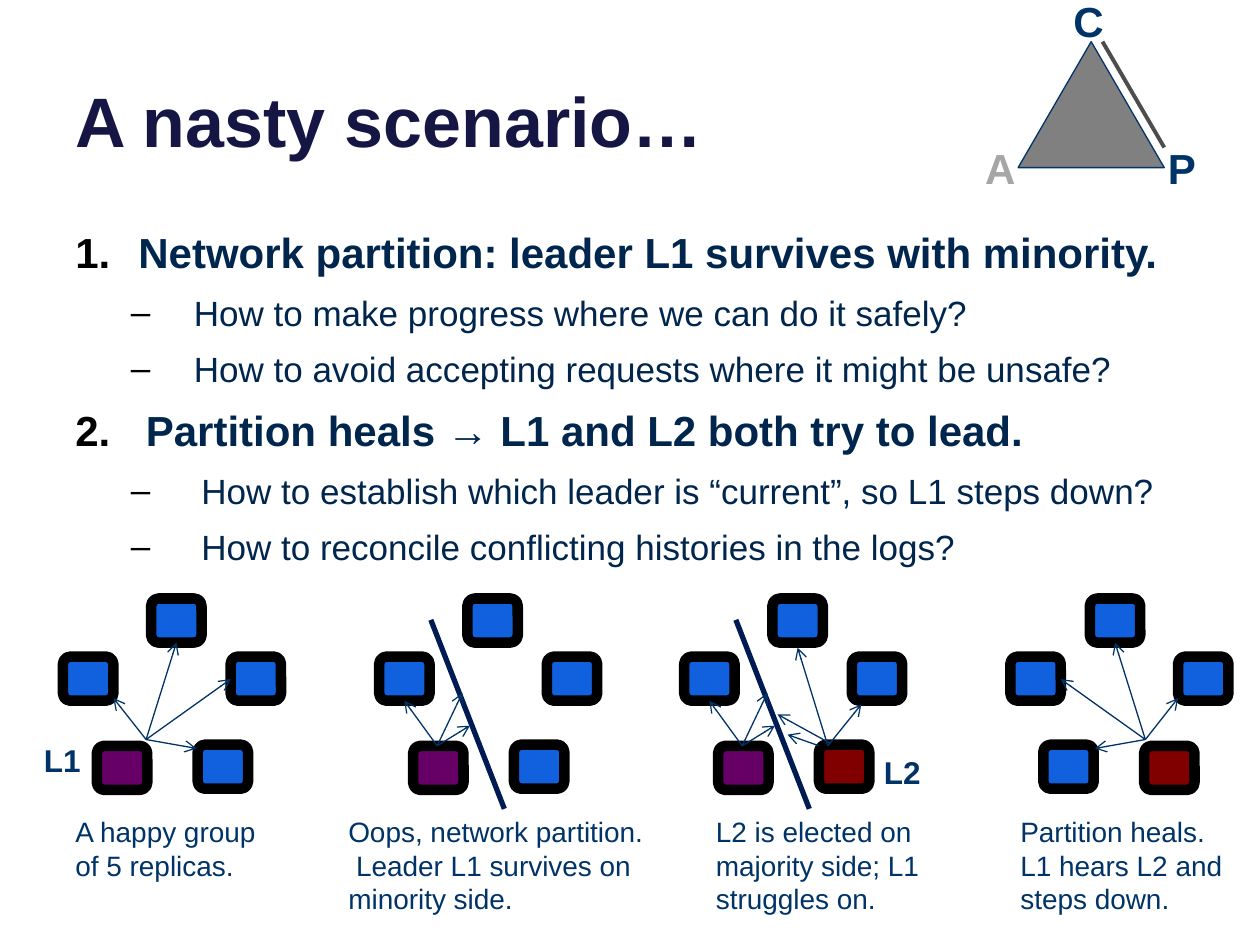
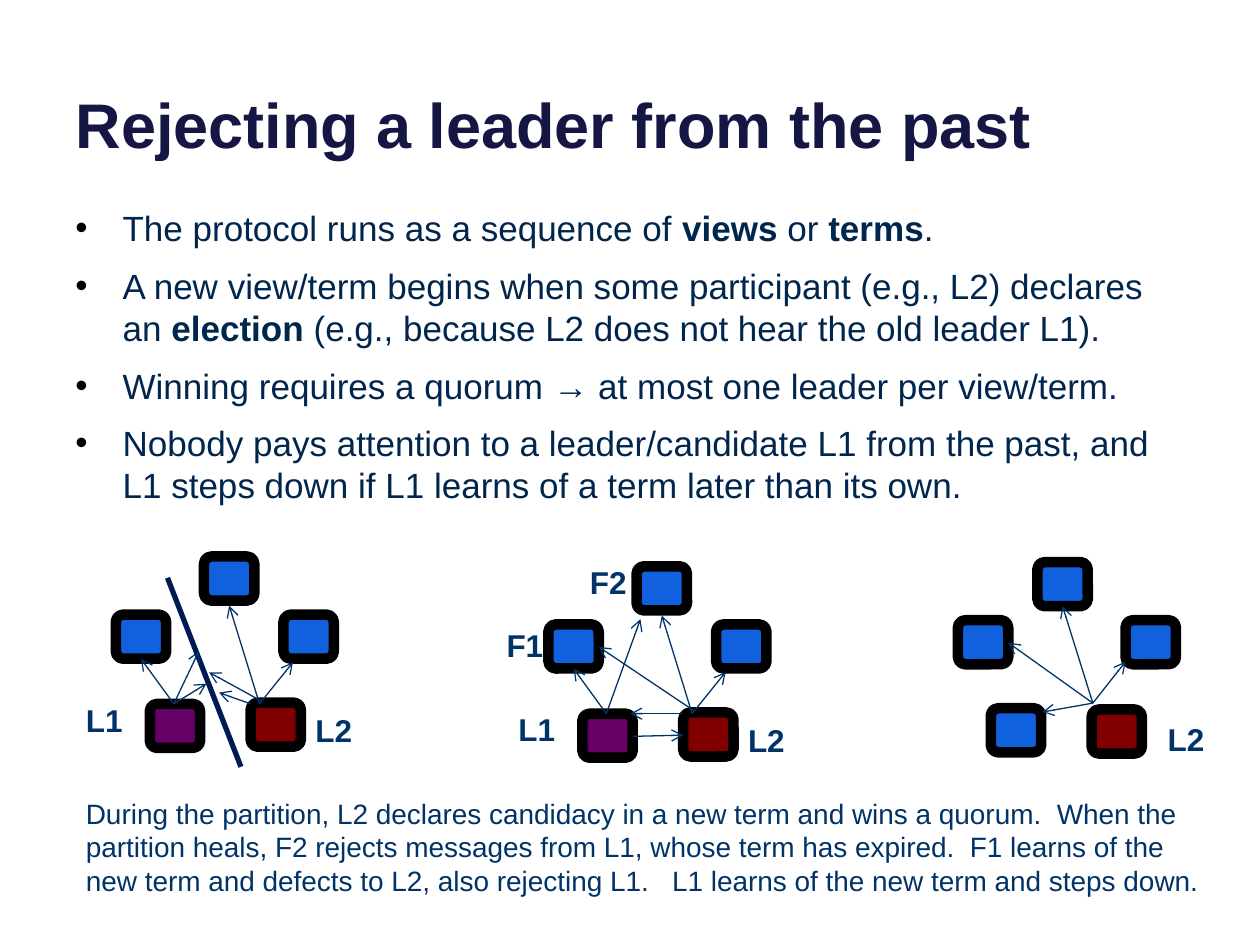
from lxml.etree import SubElement
from pptx import Presentation
from pptx.dml.color import RGBColor
from pptx.enum.shapes import MSO_CONNECTOR, MSO_SHAPE
from pptx.enum.text import MSO_ANCHOR, PP_ALIGN
from pptx.oxml.ns import qn
from pptx.util import Pt

FONT = "Arial"
COLORS = {
    "title": "161645",
    "body": "00264D",
    "label": "003367",
    "bullet": "000000",
    "rim": "000000",
    "follower": "1160DD",
    "L1": "660066",
    "L2": "800000",
    "partition": "001B53",
    "triangle": "808080",
    "edge": "4D4D4D",
    "lost": "A6A6A6",
}

REPLICA_SIZE = (28.8, 25.2)
GROUP_WIDTH = 124.6
SEATS = {
    "top": (50.4, 0),
    "right": (95.8, 33.2),
    "lower right": (77, 83.5),
    "left": (0, 33.2),
    "lower left": (19.4, 84.2),
}
PARTITION = ((29.5, 12.2), (71.5, 120.2))

ONE_LEADER = [((47.5, 80.6), target) for target in
              ((28.8, 56.9), (64.8, 25.2), (95.8, 46.1), (76.3, 85.7))]
L1_TOP, L2_TOP, L2_INNER, L2_CORNER = (33.1, 84.2), (82.1, 84.2), (83.5, 82.8), (77, 84.2)
L1_TO_LEFT = [(L1_TOP, (14.4, 58.5))]
L2_TO_MAJORITY = [(L2_TOP, (101.2, 60.5)), (L2_TOP, (64.8, 28.1))]
L1_CUT_OFF = L1_TO_LEFT + [(L1_TOP, (51.8, 72.7)), (L1_TOP, (47.5, 54))]
L2_CUT_OFF = L2_TO_MAJORITY + [(L2_INNER, (53.3, 66.2)), (L2_CORNER, (59, 77.8))]
SPLIT_LEADERS = L1_CUT_OFF + L2_CUT_OFF
HEALED_LEADERS = L1_TO_LEFT + L2_TO_MAJORITY + [
    ((48.2, 97.2), (77, 96.5)),
    (L1_TOP, (52.6, 30.2)),
    (L2_INNER, (28.8, 46.1)),
    (L2_CORNER, (46.8, 84.2)),
]
L2_LABEL = (107, 85)


def rgb(name):
    """Return a named palette colour."""
    return RGBColor.from_string(COLORS[name])


def add_run(paragraph, wording, size, color, bold=False):
    """Append one formatted run."""
    run = paragraph.add_run()
    run.text = wording
    run.font.name = FONT
    run.font.size = Pt(size)
    run.font.bold = bold
    run.font.color.rgb = rgb(color)


def add_label(shapes, box, wording, size, color="label", bold=False, wrap=True):
    """Add a text box holding one run."""
    frame = shapes.add_textbox(*map(Pt, box)).text_frame
    frame.word_wrap = wrap
    add_run(frame.paragraphs[0], wording, size, color, bold)


def add_line(shapes, start, end, color, width, arrow=False):
    """Draw a straight line, with an open arrowhead at its end if asked."""
    line = shapes.add_connector(MSO_CONNECTOR.STRAIGHT, *map(Pt, (*start, *end)))
    line.line.color.rgb = rgb(color)
    line.line.width = Pt(width)
    properties = line._element.spPr
    if arrow:
        SubElement(properties.find(qn("a:ln")), qn("a:tailEnd"), type="arrow")
    SubElement(properties, qn("a:effectLst"))


def add_solid(shapes, kind, box, fill, rim, width):
    """Add a flat filled preset shape."""
    solid = shapes.add_shape(kind, *map(Pt, box))
    solid.shadow.inherit = False
    solid.fill.solid()
    solid.fill.fore_color.rgb = rgb(fill)
    solid.line.color.rgb = rgb(rim)
    solid.line.width = Pt(width)


def add_title(slide, wording, size):
    """Place and format the slide title."""
    title = slide.shapes.title
    title.left, title.top, title.width, title.height = map(Pt, (36, -26.6, 648, 122.4))
    frame = title.text_frame
    frame.word_wrap = True
    frame.vertical_anchor = MSO_ANCHOR.BOTTOM
    paragraph = frame.paragraphs[0]
    paragraph.alignment = PP_ALIGN.LEFT
    add_run(paragraph, wording, size, "title", bold=True)


def add_body(slide, box, points):
    """Fill a box with points given as level, bullet, margin, hang, size and runs."""
    frame = slide.shapes.add_textbox(*map(Pt, box)).text_frame
    frame.word_wrap = True
    for index, (level, bullet, margin, hang, size, runs) in enumerate(points):
        paragraph = frame.add_paragraph() if index else frame.paragraphs[0]
        paragraph.level = level
        paragraph.space_before = Pt(9 - level)
        properties = paragraph._p.get_or_add_pPr()
        properties.set("marL", str(Pt(margin)))
        properties.set("indent", str(-Pt(hang)))
        tint = SubElement(properties, qn("a:buClr"))
        SubElement(tint, qn("a:srgbClr"), val=COLORS["bullet"])
        SubElement(properties, qn("a:buFont"), typeface=FONT)
        if bullet == "1.":
            SubElement(properties, qn("a:buAutoNum"), type="arabicPeriod")
        else:
            SubElement(properties, qn("a:buChar"), char=bullet)
        for wording, bold in runs:
            add_run(paragraph, wording, size, "body", bold)


def add_replicas(slide, origin, leaders, messages, labels=(), split=False, mirrored=False):
    """Draw five replicas with their messages, relative to the origin."""
    shapes = slide.shapes.add_group_shape().shapes
    left, top = origin
    width, height = REPLICA_SIZE

    def place(point, extent=0):
        """Turn a local point into slide points, mirrored if needed."""
        x, y = point
        return left + (GROUP_WIDTH - x - extent if mirrored else x), top + y

    for seat, corner in SEATS.items():
        add_solid(shapes, MSO_SHAPE.ROUNDED_RECTANGLE, (*place(corner, width), width, height),
                  leaders.get(seat, "follower"), "rim", 6)
    if split:
        add_line(shapes, *map(place, PARTITION), "partition", 3)
    for start, end in messages:
        add_line(shapes, place(start), place(end), "label", 0.75, arrow=True)
    for wording, (x, y) in labels:
        add_label(shapes, (left + x, top + y, 36, 28.8), wording, 18, bold=True)


def add_cap_triangle(slide, left, top):
    """Draw the C-A-P triangle with the C-P edge marked."""
    shapes = slide.shapes
    add_solid(shapes, MSO_SHAPE.ISOSCELES_TRIANGLE, (left, top, 83.5, 72), "triangle", "label", 0.75)
    for letter, x, y, width, color in (
        ("C", 24.5, -29.6, 32.4, "label"),
        ("A", -26, 54, 32.4, "lost"),
        ("P", 78.5, 54, 30.2, "label"),
    ):
        add_label(shapes, (left + x, top + y, width, 36), letter, 24, color, bold=True, wrap=False)
    add_line(shapes, (left + 48.2, top), (left + 83.5, top + 60.5), "edge", 2.25)


def build_scenario(slide):
    """Build the slide on the partition scenario."""
    add_title(slide, "A nasty scenario…", 40)
    sections = [
        (36, 67.7, 36, "Network partition: leader L1 survives with minority.",
         ("How to make progress where we can do it safely?",
          "How to avoid accepting requests where it might be unsafe?")),
        (40.3, 72, 40.3, "Partition heals → L1 and L2 both try to lead.",
         ("How to establish which leader is “current”, so L1 steps down?",
          "How to reconcile conflicting histories in the logs?")),
    ]
    points = []
    for margin, sub_margin, hang, heading, questions in sections:
        points.append((0, "1.", margin, hang, 24, [(heading, True)]))
        points += [(1, "–", sub_margin, hang, 20, [(question, False)]) for question in questions]
    add_body(slide, (36, 126, 648, 203.8), points)
    add_cap_triangle(slide, 581.8, 23.8)

    row = 342
    add_replicas(slide, (36, row), {"lower left": "L1"}, ONE_LEADER, [("L1", (-18, 77.8))])
    add_replicas(slide, (216.7, row), {"lower left": "L1"}, L1_CUT_OFF, split=True)
    add_replicas(slide, (391, row), {"lower left": "L1", "lower right": "L2"}, SPLIT_LEADERS,
                 [("L2", L2_LABEL)], split=True)
    add_replicas(slide, (577.4, row), {"lower left": "L2"}, ONE_LEADER, mirrored=True)
    for left, width, caption in (
        (36, 126, "A happy group of 5 replicas."),
        (192, 186, "Oops, network partition.  Leader L1 survives on minority side."),
        (402, 186, "L2 is elected on majority side; L1 struggles on."),
        (576, 144, "Partition heals.  L1 hears L2 and steps down."),
    ):
        add_label(slide.shapes, (left, 462, width, 65.5), caption, 16)


def build_rejection(slide):
    """Build the slide on rejecting an old leader."""
    add_title(slide, "Rejecting a leader from the past", 36)
    statements = [
        [("The protocol runs as a sequence of ", False), ("views", True), (" or ", False),
         ("terms", True), (".", False)],
        [("A new view/term begins when some participant (e.g., L2) declares an ", False),
         ("election", True), (" (e.g., because L2 does not hear the old leader L1).", False)],
        [("Winning requires a quorum ", False), ("→ ", True),
         ("at most one leader per view/term.", False)],
        [("Nobody pays attention to a leader/candidate L1 from the past, and L1 steps down "
          "if L1 learns of a term later than its own.", False)],
    ]
    add_body(slide, (36, 114.5, 648, 234),
             [(0, "•", 27, 27, 20, runs) for runs in statements])

    rivals = {"lower left": "L1", "lower right": "L2"}
    rival_labels = [("L1", (-24.2, 78.8)), ("L2", L2_LABEL)]
    add_replicas(slide, (66.2, 318), rivals, SPLIT_LEADERS, rival_labels, split=True)
    add_replicas(slide, (313.4, 323.6), rivals, HEALED_LEADERS,
                 rival_labels + [("F1", (-31, 30.8)), ("F2", (16.6, -5.2))])
    add_replicas(slide, (547.4, 321.2), {"lower left": "L2"}, ONE_LEADER,
                 [("L2", (112.8, 87))], mirrored=True)
    add_label(slide.shapes, (42, 451.4, 654, 65.5),
              "During the partition, L2 declares candidacy in a new term and wins a quorum.  "
              "When the partition heals, F2 rejects messages from L1, whose term has expired.  "
              "F1 learns of the new term and defects to L2, also rejecting L1.   "
              "L1 learns of the new term and steps down.", 16)


def main():
    """Build and save the presentation."""
    deck = Presentation()
    deck.slide_width, deck.slide_height = Pt(720), Pt(540)
    title_only = deck.slide_layouts[5]
    for build in (build_scenario, build_rejection):
        build(deck.slides.add_slide(title_only))
    deck.save("out.pptx")


if __name__ == "__main__":
    main()
